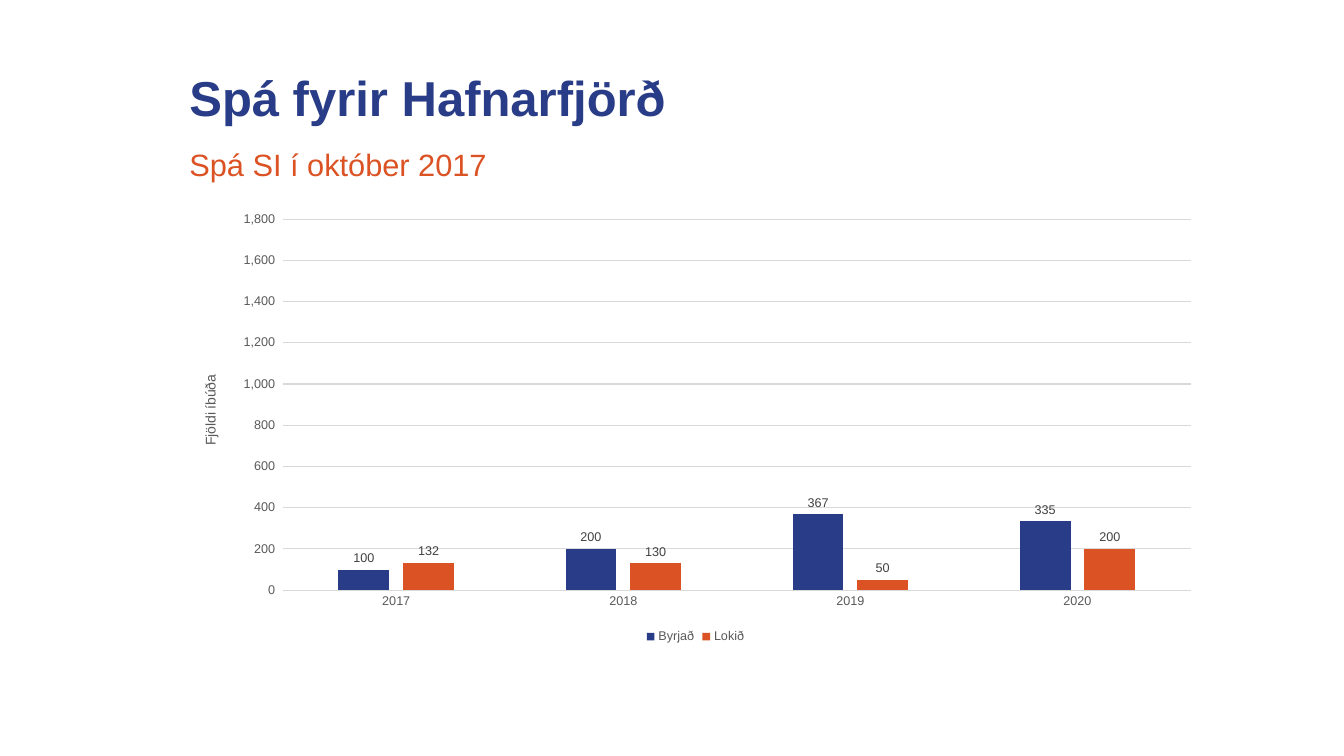
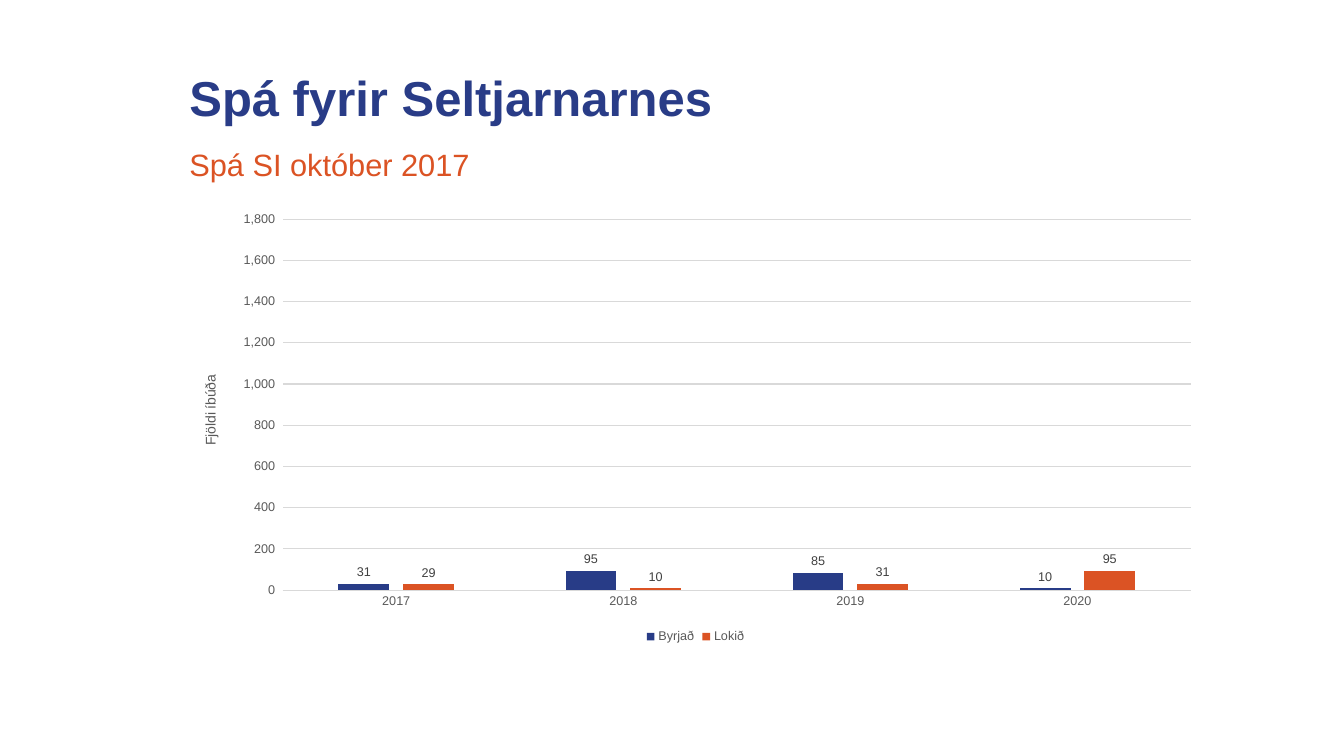
from dataclasses import dataclass
from typing import Any

from lxml.etree import SubElement
from pptx import Presentation
from pptx.chart.chart import Chart
from pptx.chart.data import CategoryChartData
from pptx.dml.color import RGBColor
from pptx.enum.chart import XL_CHART_TYPE, XL_LABEL_POSITION, XL_LEGEND_POSITION, XL_TICK_MARK
from pptx.enum.text import MSO_ANCHOR
from pptx.oxml.ns import qn
from pptx.slide import Slide
from pptx.util import Pt

FONT = "Arial"
TITLE_BLUE, STARTED_BLUE, ORANGE = "293C87", "283C87", "DB5324"
AXIS_GREY, LABEL_GREY, GRID_GREY = "595959", "404040", "D9D9D9"
LEFT, WIDTH = 128.2, 737.3
CHART_TOP, CHART_HEIGHT = 145.4, 317.5
YEARS = ["2017", "2018", "2019", "2020"]
NUMBER_FORMAT = r"#,##0_ ;\-#,##0\ "
PLOT_LAYOUT = {"layoutTarget": "inner", "xMode": "edge", "yMode": "edge",
               "x": "0.1", "y": "0.035", "w": "0.88", "h": "0.835"}


@dataclass(frozen=True)
class TextStyle:
    top: float
    height: float
    size: float
    color: str
    bold: bool
    anchor: MSO_ANCHOR


@dataclass(frozen=True)
class Forecast:
    title: str
    subtitle: str
    started: tuple[int, ...]
    finished: tuple[int, ...]


TITLE = TextStyle(43.2, 51.1, 35, TITLE_BLUE, True, MSO_ANCHOR.BOTTOM)
SUBTITLE = TextStyle(103.7, 28.1, 22, ORANGE, False, MSO_ANCHOR.TOP)
FORECASTS = [
    Forecast("Spá fyrir Hafnarfjörð", "Spá SI í október 2017",
             (100, 200, 367, 335), (132, 130, 50, 200)),
    Forecast("Spá fyrir Seltjarnarnes", "Spá SI október 2017",
             (31, 95, 85, 10), (29, 10, 31, 95)),
]


def rgb(color: str) -> RGBColor:
    return RGBColor.from_string(color)


def set_all(target: Any, values: dict[str, Any]) -> None:
    for name, value in values.items():
        setattr(target, name, value)


def set_font(font: Any, size: float, color: str, bold: bool = False) -> None:
    set_all(font, {"name": FONT, "size": Pt(size), "bold": bold})
    font.color.rgb = rgb(color)


def set_line(line: Any, color: str) -> None:
    line.color.rgb = rgb(color)
    line.width = Pt(0.75)


def add_text(s: Slide, text: str, style: TextStyle) -> None:
    sp = s.shapes.add_textbox(Pt(LEFT), Pt(style.top), Pt(WIDTH), Pt(style.height))
    tf = sp.text_frame
    set_all(tf, {"word_wrap": True, "vertical_anchor": style.anchor})
    p = tf.paragraphs[0]
    p.line_spacing = 0.9
    r = p.add_run()
    r.text = text
    set_font(r.font, style.size, style.color, style.bold)


def place_plot(chart: Chart) -> None:
    area = chart.element.find(".//" + qn("c:plotArea"))
    for old in area.findall(qn("c:layout")):
        area.remove(old)
    layout = SubElement(area, qn("c:layout"))
    area.insert(0, layout)
    manual = SubElement(layout, qn("c:manualLayout"))
    for name, value in PLOT_LAYOUT.items():
        SubElement(manual, qn("c:" + name)).set("val", value)


def style_axes(chart: Chart) -> None:
    for axis in (chart.category_axis, chart.value_axis):
        set_all(axis, {"major_tick_mark": XL_TICK_MARK.NONE, "minor_tick_mark": XL_TICK_MARK.NONE})
        set_font(axis.tick_labels.font, 9, AXIS_GREY)
    set_line(chart.category_axis.format.line, GRID_GREY)
    axis = chart.value_axis
    set_all(axis, {"minimum_scale": 0, "maximum_scale": 1800, "major_unit": 200,
                   "has_major_gridlines": True})
    set_line(axis.major_gridlines.format.line, GRID_GREY)
    axis.format.line.fill.background()
    set_all(axis.tick_labels, {"number_format": NUMBER_FORMAT, "number_format_is_linked": False})
    p = axis.axis_title.text_frame.paragraphs[0]
    r = p.add_run()
    r.text = "Fjöldi íbúða"
    set_font(r.font, 10, AXIS_GREY)


def add_forecast_chart(s: Slide, forecast: Forecast) -> None:
    data = CategoryChartData()
    data.categories = YEARS
    data.add_series("Byrjað", forecast.started)
    data.add_series("Lokið", forecast.finished)
    chart = s.shapes.add_chart(XL_CHART_TYPE.COLUMN_CLUSTERED, Pt(LEFT), Pt(CHART_TOP),
                               Pt(WIDTH), Pt(CHART_HEIGHT), data).chart
    set_all(chart, {"has_title": False, "has_legend": True})
    set_font(chart.font, 10, "000000")
    set_all(chart.legend, {"position": XL_LEGEND_POSITION.BOTTOM, "include_in_layout": False})
    set_font(chart.legend.font, 9, AXIS_GREY)
    plot = chart.plots[0]
    set_all(plot, {"gap_width": 219, "overlap": -27, "vary_by_categories": False})
    for series, color in zip(plot.series, (STARTED_BLUE, ORANGE)):
        series.format.fill.solid()
        series.format.fill.fore_color.rgb = rgb(color)
        labels = series.data_labels
        set_all(labels, {"show_value": True, "position": XL_LABEL_POSITION.OUTSIDE_END})
        set_font(labels.font, 9, LABEL_GREY)
    style_axes(chart)
    place_plot(chart)


def main() -> None:
    prs = Presentation()
    set_all(prs, {"slide_width": Pt(960), "slide_height": Pt(540)})
    for forecast in FORECASTS:
        s = prs.slides.add_slide(prs.slide_layouts[6])
        add_text(s, forecast.title, TITLE)
        add_forecast_chart(s, forecast)
        add_text(s, forecast.subtitle, SUBTITLE)
    prs.save("out.pptx")


if __name__ == "__main__":
    main()
